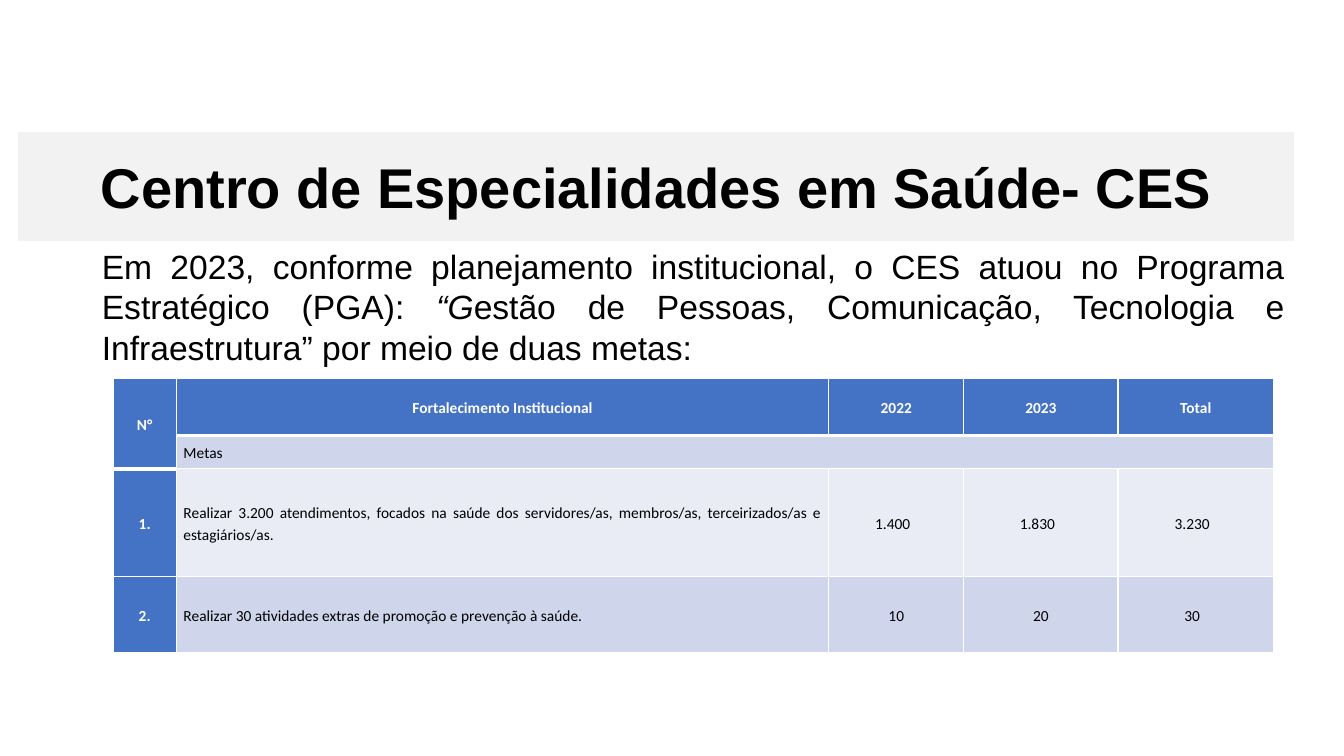
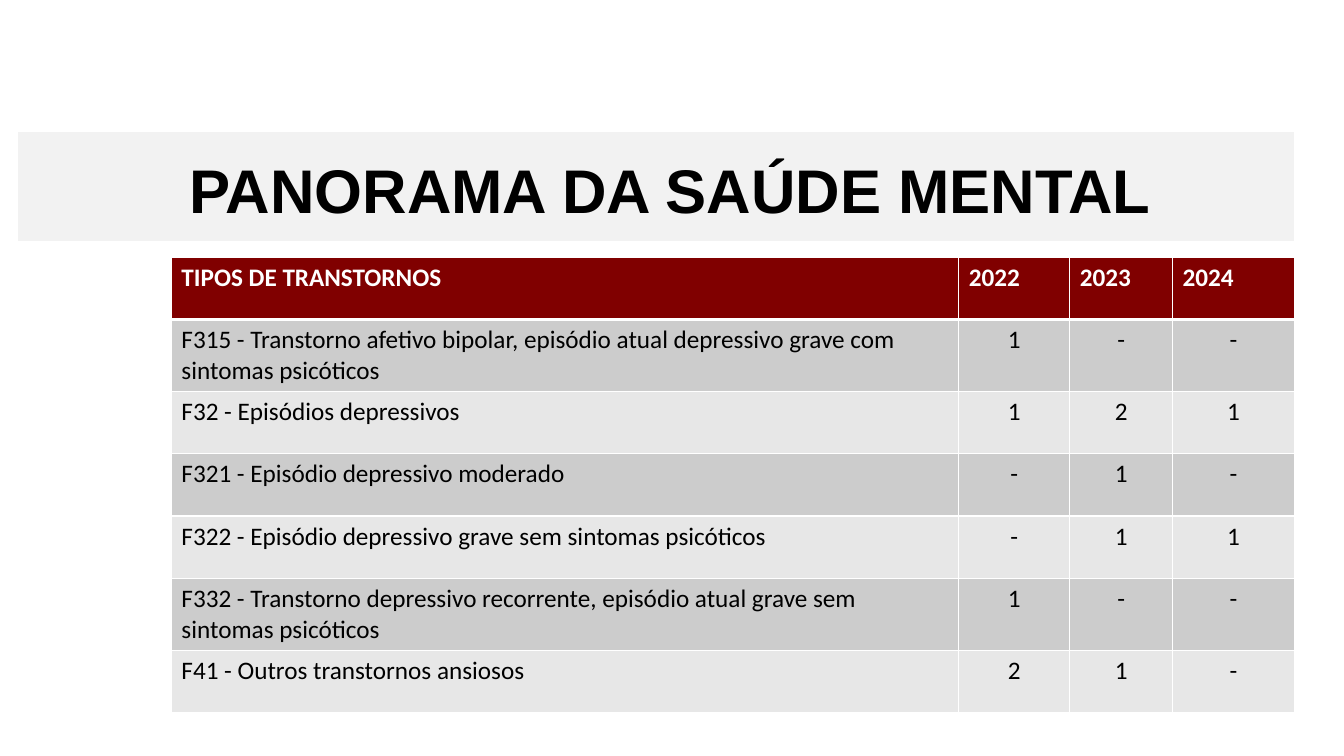
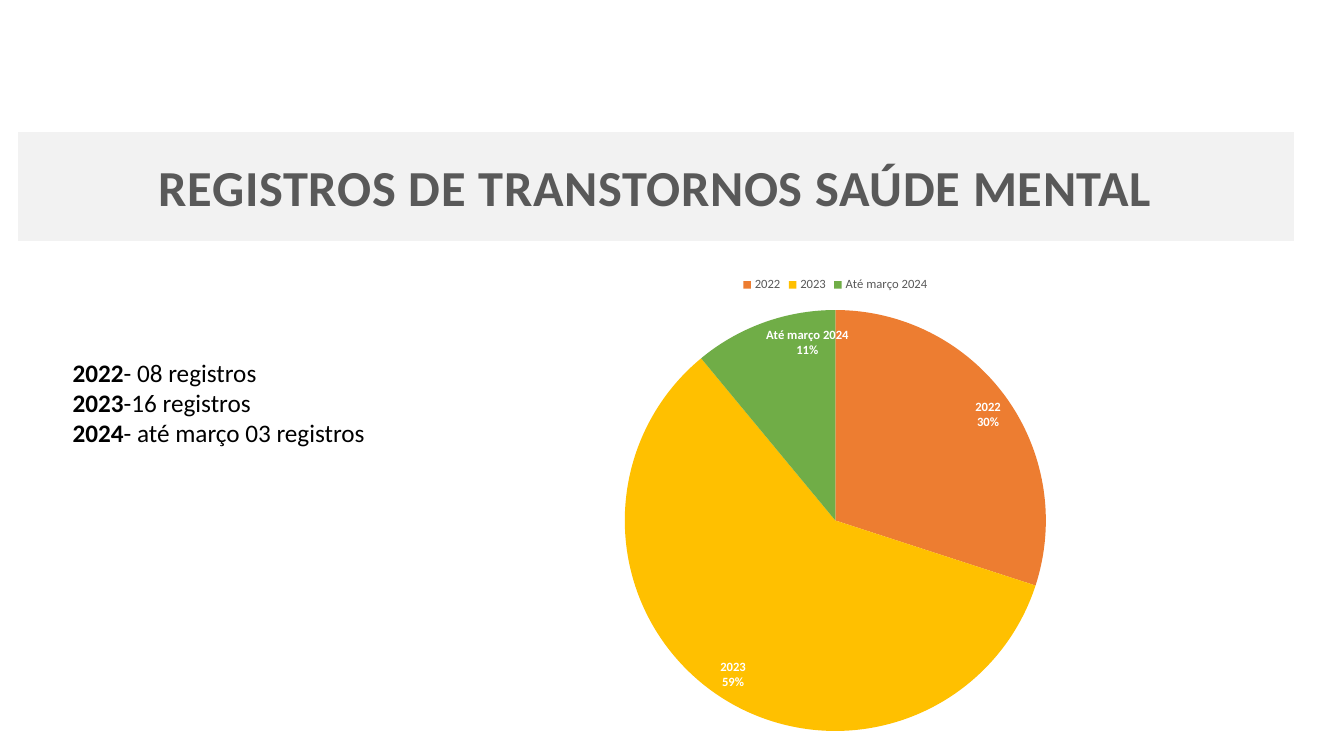
import pptx
import pptx.chart.data
import pptx.dml.color
import pptx.enum.chart
import pptx.enum.text
import pptx.oxml
import pptx.oxml.ns
import pptx.util
from lxml import etree

Inches, Pt = pptx.util.Inches, pptx.util.Pt
ALIGN = pptx.enum.text.PP_ALIGN
ANCHOR = pptx.enum.text.MSO_ANCHOR
FIT = pptx.enum.text.MSO_AUTO_SIZE

COLORS = {
    "white": "FFFFFF", "black": "000000", "band": "F2F2F2", "gray": "595959",
    "blue": "4472C4", "blue_mid": "CFD5EA", "blue_pale": "E9EBF5",
    "maroon": "800000", "gray_mid": "CCCCCC", "gray_pale": "E7E7E7",
    "orange": "ED7D31", "gold": "FFC000", "green": "70AD47",
}

# Shared formats
BAND = (0.17, 1.3, 12.67, 1.1)
TITLE = {"name": "Arial", "size": Pt(40), "bold": True, "color": "black"}
BODY = {"name": "Calibri", "size": Pt(18), "bold": False, "color": "black"}
HEAD = {"bold": True, "color": "white"}

# Content: goals
GOALS_TITLE = "Centro de Especialidades em Saúde- CES"
GOALS_INTRO = [[
    ("Em 2023, conforme planejamento institucional, o CES atuou no Programa "
     "Estratégico (PGA):", {}),
    (" “G", {"italic": True}),
    ("estão de Pessoas, Comunicação, Tecnologia e Infraestrutura” por meio de "
     "duas metas:", {}),
]]
GOALS = [
    ["N°", "Fortalecimento Institucional", "2022", "2023", "Total"],
    ["", "Metas", "", "", ""],
    ["1.", "Realizar 3.200 atendimentos, focados na saúde dos servidores/as, "
     "membros/as, terceirizados/as e estagiários/as.", "1.400", "1.830", "3.230"],
    ["2.", "Realizar 30 atividades extras de promoção e prevenção à saúde.",
     "10", "20", "30"],
]
GOALS_COLS = [0.63, 6.47, 1.34, 1.53, 1.54]
GOALS_ROWS = [0.57, 0.33, 1.07, 0.75]
SHIFTED_GOALS = {(2, 2), (2, 3), (2, 4), (3, 4)}

# Content: disorders
DISORDERS_TITLE = "PANORAMA DA SAÚDE MENTAL"
DISORDERS = [
    ["TIPOS DE TRANSTORNOS", "2022", "2023", "2024"],
    ["F315 - Transtorno afetivo bipolar, episódio atual depressivo grave com "
     "sintomas psicóticos", "1", "-", "-"],
    ["F32 - Episódios depressivos", "1", "2", "1"],
    ["F321 - Episódio depressivo moderado", "-", "1", "-"],
    ["F322 - Episódio depressivo grave sem sintomas psicóticos", "-", "1", "1"],
    ["F332 - Transtorno depressivo recorrente, episódio atual grave sem "
     "sintomas psicóticos", "1", "-", "-"],
    ["F41 - Outros transtornos ansiosos", "2", "1", "-"],
]
DISORDERS_COLS = [7.81, 1.1, 1.02, 1.21]
DISORDERS_ROWS = [0.62, 0.69, 0.62, 0.62, 0.62, 0.69, 0.62]

# Content: records
RECORDS_TITLE = "REGISTROS DE TRANSTORNOS SAÚDE MENTAL"
RECORDS = [
    [("2022", {"bold": True}), ("- 08 registros", {})],
    [("2023", {"bold": True}), ("-16 registros", {})],
    [("2024", {"bold": True}), ("- até março 03 registros", {})],
]
SHARES = [("2022", 30, "orange"), ("2023", 59, "gold"),
          ("Até março 2024", 11, "green")]


def rgb(name):
    return pptx.dml.color.RGBColor.from_string(COLORS[name])


def set_all(target, values):
    for name, value in values.items():
        setattr(target, name, value)


def set_font(font, values):
    values = dict(values)
    font.color.rgb = rgb(values.pop("color"))
    set_all(font, values)


def set_fill(part, color):
    part.fill.solid()
    part.fill.fore_color.rgb = rgb(color)


def place(shape, box):
    names = ("left", "top", "width", "height")
    set_all(shape, dict(zip(names, map(Inches, box))))


def add_slide(deck, layout, title, font=None, spacing=None, indent=0, tracking=0):
    """Slide with the gray title band."""
    slide = deck.slides.add_slide(deck.slide_layouts[layout])
    band = slide.shapes.title
    place(band, BAND)
    set_fill(band, "band")
    band.line.color.rgb = rgb("white")
    band.line.width = Pt(1)
    set_all(band.text_frame, {"vertical_anchor": ANCHOR.MIDDLE,
                              "word_wrap": True, "auto_size": FIT.NONE})
    line = band.text_frame.paragraphs[0]
    set_all(line, {"alignment": ALIGN.CENTER, **(spacing or {})})
    if indent:
        line._p.get_or_add_pPr().set("marL", str(Inches(indent)))
    run = line.add_run()
    run.text = title
    set_font(run.font, {**TITLE, **(font or {})})
    if tracking:
        run._r.get_or_add_rPr().set("spc", str(tracking))
    return slide


def fill_body(slide, box, lines, align, font):
    body = slide.placeholders[1]
    place(body, box)
    frame = body.text_frame
    set_all(frame, {"word_wrap": True, "auto_size": FIT.SHAPE_TO_FIT_TEXT})
    for i, runs in enumerate(lines):
        line = frame.add_paragraph() if i else frame.paragraphs[0]
        props = line._p.get_or_add_pPr()
        set_all(line, {"alignment": align, "space_before": Pt(0)})
        props.set("marL", "0")
        props.set("indent", "0")
        etree.SubElement(props, pptx.oxml.ns.qn("a:buNone"))
        for text, changes in runs:
            run = line.add_run()
            run.text = text
            set_font(run.font, {**BODY, **font, **changes})


def set_borders(cell, top, bottom):
    props = cell._tc.get_or_add_tcPr()
    for i, (side, width) in enumerate(zip("LRTB", (1, 1, top, bottom))):
        props.insert(i, pptx.oxml.parse_xml(
            f'<a:ln{side} {pptx.oxml.ns.nsdecls("a")} w="{Pt(width)}">'
            f'<a:solidFill><a:srgbClr val="{COLORS["white"]}"/></a:solidFill>'
            f'</a:ln{side}>'))


def add_table(slide, corner, rows, widths, heights, style):
    """Table whose style(row, col) gives fill, font, paragraph and cell values."""
    box = (*corner, sum(widths), sum(heights))
    table = slide.shapes.add_table(len(rows), len(widths), *map(Inches, box)).table
    for col, width in zip(table.columns, widths):
        col.width = Inches(width)
    for row, height in zip(table.rows, heights):
        row.height = Inches(height)
    for r, texts in enumerate(rows):
        for c, text in enumerate(texts):
            cell = table.cell(r, c)
            look = style(r, c)
            set_fill(cell, look["fill"])
            set_borders(cell, *look["rules"])
            set_all(cell, look.get("cell", {}))
            line = cell.text_frame.paragraphs[0]
            set_all(line, look["line"])
            if text:
                run = line.add_run()
                run.text = text
                set_font(run.font, {**BODY, **look["font"]})
    return table


def goal_style(r, c):
    head = r == 0 or c == 0
    if head:
        fill = "blue"
    else:
        fill = "blue_pale" if r == 2 else "blue_mid"
    align = ALIGN.CENTER
    if c == 1 and r:
        align = ALIGN.JUSTIFY if r == 2 else ALIGN.LEFT
    top = 3 if r == 1 or (r, c) == (2, 0) else 1
    bottom = 3 if r == 0 or (r, c) == (1, 0) else 1
    return {
        "fill": fill, "rules": (top, bottom),
        "font": {"size": Pt(11), **(HEAD if head else {})},
        "line": {"alignment": align, "line_spacing": 1.15},
        "cell": {"vertical_anchor": ANCHOR.MIDDLE, "margin_left": Inches(0.07),
                 "margin_right": Inches(0.14 if (r, c) in SHIFTED_GOALS else 0.07),
                 "margin_top": 0, "margin_bottom": 0},
    }


def disorder_style(r, c):
    return {
        "fill": ("gray_mid" if r % 2 else "gray_pale") if r else "maroon",
        "rules": (3 if r == 1 else 1, 1 if r else 3),
        "font": {} if r else HEAD,
        "line": {"alignment": ALIGN.CENTER if r and c else ALIGN.LEFT},
    }


def add_pie(slide, box):
    data = pptx.chart.data.CategoryChartData()
    data.categories = [name for name, _, _ in SHARES]
    data.add_series("Series 1", [share for _, share, _ in SHARES])
    chart = slide.shapes.add_chart(
        pptx.enum.chart.XL_CHART_TYPE.PIE, *map(Inches, box), data).chart
    set_all(chart, {"has_title": False, "has_legend": True})
    set_font(chart.font, {"name": "Calibri", "size": Pt(10), "color": "black"})
    set_all(chart.legend, {"position": pptx.enum.chart.XL_LEGEND_POSITION.TOP,
                           "include_in_layout": False})
    set_font(chart.legend.font, {"name": "Calibri", "size": Pt(9), "color": "gray"})

    pie = chart.plots[0]
    pie.vary_by_categories = True
    for i, (_, _, color) in enumerate(SHARES):
        set_fill(pie.series[0].points[i].format, color)
    labels = pie.series[0].data_labels
    set_all(labels, {"show_percentage": True, "show_category_name": True,
                     "show_value": False,
                     "position": pptx.enum.chart.XL_LABEL_POSITION.INSIDE_END})
    set_font(labels.font, {"name": "Calibri", "size": Pt(9), **HEAD})
    # Category and percentage on separate lines
    separator = etree.Element(pptx.oxml.ns.qn("c:separator"))
    separator.text = "\n"
    labels._element.find(pptx.oxml.ns.qn("c:showBubbleSize")).addnext(separator)


def main():
    deck = pptx.Presentation()
    set_all(deck, {"slide_width": Inches(13.33), "slide_height": Inches(7.5)})

    # Goals
    goals = add_slide(deck, 1, GOALS_TITLE)
    fill_body(goals, (0.91, 2.39, 11.93, 3.43), GOALS_INTRO, ALIGN.JUSTIFY,
              {"name": "Arial", "size": Pt(24)})
    table = add_table(goals, (1.12, 3.75), GOALS, GOALS_COLS, GOALS_ROWS, goal_style)
    table.cell(0, 0).merge(table.cell(1, 0))
    table.cell(1, 1).merge(table.cell(1, 4))

    # Disorders
    disorders = add_slide(deck, 5, DISORDERS_TITLE, {"size": Pt(44)},
                          {"line_spacing": 1.07, "space_after": Pt(8)}, indent=0.29)
    add_table(disorders, (1.7, 2.55), DISORDERS, DISORDERS_COLS, DISORDERS_ROWS,
              disorder_style)

    # Records
    records = add_slide(deck, 1, RECORDS_TITLE,
                        {"name": "Calibri", "size": Pt(36), "color": "gray"},
                        tracking=50)
    add_pie(records, (4.8, 2.64, 6.97, 4.75))
    fill_body(records, (0.62, 3.49, 5.35, 1.01), RECORDS, ALIGN.LEFT, {})

    deck.save("out.pptx")


if __name__ == "__main__":
    main()
